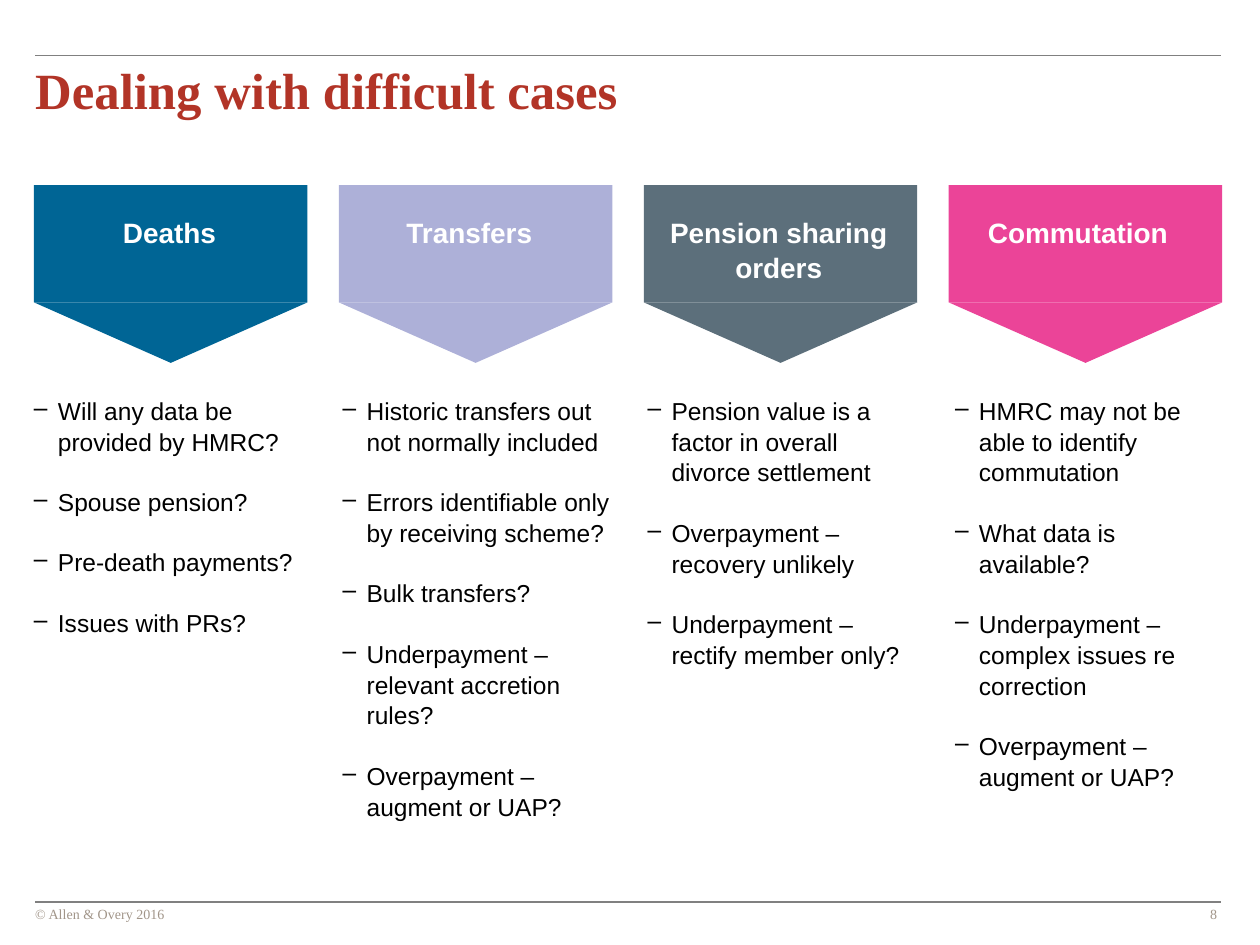
from dataclasses import dataclass

from lxml import etree
from pptx import Presentation
from pptx import util as u
from pptx.dml.color import RGBColor
from pptx.enum import shapes, text
from pptx.oxml import ns


@dataclass(frozen=True)
class Theme:
    serif: str = "Times New Roman"
    sans: str = "Arial"
    title: str = "B23427"
    body: str = "000000"
    heading: str = "FFFFFF"
    footer: str = "A19589"
    rule: str = "808080"
    title_size: float = 29
    heading_size: float = 16
    body_size: float = 14
    footer_size: float = 8
    leading: float = 1.05
    item_gap: float = 16.9


@dataclass(frozen=True)
class Column:
    heading: str
    fill: str
    heading_shift: float
    heading_width: float
    body_shift: float
    items: tuple


THEME = Theme()
LEFT, RIGHT = 0.28, 9.69
COLUMN_LEFT, COLUMN_PITCH, COLUMN_WIDTH = 0.27, 2.42, 2.17
BLOCK_TOP, POINT_TOP, POINT_HEIGHT = 1.47, 2.4, 0.48
HEADING_TOP, BODY_TOP, BODY_HEIGHT = 1.7, 3.13, 3.3
INDENT = 0.19

COLUMNS = (
    Column("Deaths", "006595", 0.22, 1.71, 0, (
        "Will any data be provided by HMRC?",
        "Spouse pension?",
        "Pre-death payments?",
        "Issues with PRs?",
    )),
    Column("Transfers", "ADB0D8", 0.14, 1.79, 0.03, (
        "Historic transfers out not normally included",
        "Errors identifiable only by receiving scheme?",
        "Bulk transfers?",
        "Underpayment – relevant accretion rules?",
        "Overpayment – augment or UAP?",
    )),
    Column("Pension sharing orders", "5C6F7B", 0.18, 1.78, 0.03, (
        "Pension value is a factor in overall divorce settlement",
        "Overpayment – recovery unlikely",
        "Underpayment – rectify member only?",
    )),
    Column("Commutation", "EB4498", 0.05, 1.95, 0.05, (
        "HMRC may not be able to identify commutation",
        "What data is available?",
        "Underpayment – complex issues re correction",
        "Overpayment – augment or UAP?",
    )),
)


def inches(*lengths):
    return [u.Inches(length) for length in lengths]


def colour(value):
    return RGBColor.from_string(value)


def add_rule(slide, top):
    line = slide.shapes.add_connector(
        shapes.MSO_CONNECTOR.STRAIGHT, *inches(LEFT, top, RIGHT, top))
    line.line.color.rgb = colour(THEME.rule)
    line.line.width = u.Pt(1)
    etree.SubElement(line._element.spPr, ns.qn("a:effectLst"))


def add_shape(slide, kind, place, fill):
    shape = slide.shapes.add_shape(kind, *inches(*place))
    shape.shadow.inherit = False
    shape.fill.solid()
    shape.fill.fore_color.rgb = colour(fill)
    shape.line.fill.background()
    return shape


def add_bullet(para):
    properties = para._p.get_or_add_pPr()
    properties.set("marL", str(u.Inches(INDENT)))
    properties.set("indent", str(-u.Inches(INDENT)))
    etree.SubElement(properties, ns.qn("a:buChar"), char="–")


def add_text(slide, place, lines, font, size, fill, bold=False, bullets=False,
             align=text.PP_ALIGN.LEFT, anchor=text.MSO_ANCHOR.TOP, leading=1.0):
    frame = slide.shapes.add_textbox(*inches(*place)).text_frame
    frame.word_wrap = True
    frame.vertical_anchor = anchor
    frame.margin_left = frame.margin_right = 0
    frame.margin_top = frame.margin_bottom = 0
    for index, line in enumerate(lines):
        para = frame.add_paragraph() if index else frame.paragraphs[0]
        para.text = line
        if bullets:
            add_bullet(para)
        para.alignment = align
        para.line_spacing = leading
        if index:
            para.space_before = u.Pt(THEME.item_gap)
        para.font.name = font
        para.font.size = u.Pt(size)
        para.font.bold = bold
        para.font.color.rgb = colour(fill)


def add_column(slide, index, column):
    left = COLUMN_LEFT + index * COLUMN_PITCH
    add_shape(slide, shapes.MSO_SHAPE.RECTANGLE,
              (left, BLOCK_TOP, COLUMN_WIDTH, POINT_TOP - BLOCK_TOP), column.fill)
    point = add_shape(slide, shapes.MSO_SHAPE.ISOSCELES_TRIANGLE,
                      (left, POINT_TOP, COLUMN_WIDTH, POINT_HEIGHT), column.fill)
    point.rotation = 180
    add_text(slide, (left + column.heading_shift, HEADING_TOP, column.heading_width, 0.54),
             [column.heading], THEME.sans, THEME.heading_size, THEME.heading,
             bold=True, align=text.PP_ALIGN.CENTER, leading=THEME.leading)
    add_text(slide, (left + column.body_shift, BODY_TOP, COLUMN_WIDTH, BODY_HEIGHT),
             column.items, THEME.sans, THEME.body_size, THEME.body,
             bullets=True, leading=THEME.leading)


def add_footer(slide, left, line, align):
    add_text(slide, (left, 7.19, 7.17, 0.13), [line], THEME.serif,
             THEME.footer_size, THEME.footer, align=align)


def main():
    deck = Presentation()
    deck.slide_width, deck.slide_height = inches(10, 7.5)
    slide = deck.slides.add_slide(deck.slide_layouts[6])
    for top in (0.44, 7.16):
        add_rule(slide, top)
    add_footer(slide, LEFT, "© Allen & Overy 2016", text.PP_ALIGN.LEFT)
    add_footer(slide, 2.49, "8", text.PP_ALIGN.RIGHT)
    add_text(slide, (LEFT, 0.46, 9.37, 0.49), ["Dealing with difficult cases"],
             THEME.serif, THEME.title_size, THEME.title, bold=True,
             anchor=text.MSO_ANCHOR.BOTTOM)
    for index, column in enumerate(COLUMNS):
        add_column(slide, index, column)
    deck.save("out.pptx")


if __name__ == "__main__":
    main()
